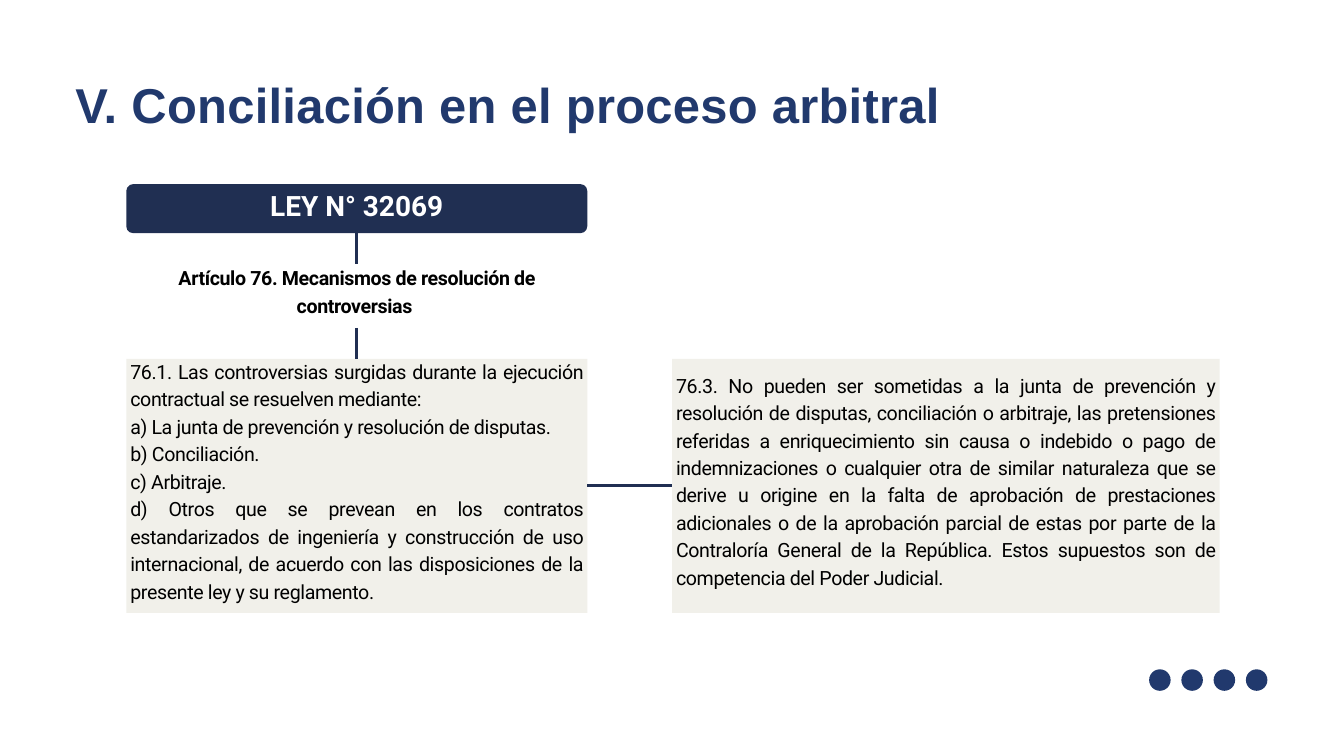
"""Build the slide on conciliation within arbitration proceedings."""
from dataclasses import dataclass

from lxml import etree
from pptx import Presentation
from pptx.dml.color import RGBColor
from pptx.enum.shapes import MSO_CONNECTOR, MSO_SHAPE
from pptx.enum.text import MSO_ANCHOR, MSO_AUTO_SIZE, PP_ALIGN
from pptx.oxml.ns import qn
from pptx.util import Inches, Pt

RECT, ROUNDED, OVAL = MSO_SHAPE.RECTANGLE, MSO_SHAPE.ROUNDED_RECTANGLE, MSO_SHAPE.OVAL
LEFT, CENTER, JUSTIFY = PP_ALIGN.LEFT, PP_ALIGN.CENTER, PP_ALIGN.JUSTIFY
TOP, MIDDLE = MSO_ANCHOR.TOP, MSO_ANCHOR.MIDDLE
STRAIGHT = MSO_CONNECTOR.STRAIGHT
NO_AUTOFIT = MSO_AUTO_SIZE.NONE
SIDE_TOP, SIDE_LEFT, SIDE_BOTTOM, SIDE_RIGHT = range(4)

COLORS = {
    "title": "21396D",
    "navy": "202F52",
    "panel": "F1F0EA",
    "white": "FFFFFF",
    "black": "000000",
}


@dataclass(frozen=True)
class TextStyle:
    """Format shared by all the paragraphs of a text."""

    size: float
    line: float
    color: str
    align: PP_ALIGN
    font: str = "Roboto"
    bold: bool = False
    tracking: float = 0


@dataclass(frozen=True)
class Box:
    """A filled box with its text, which sits above centre by half the lift."""

    left: float
    top: float
    width: float
    height: float
    fill: str
    lift: float
    style: TextStyle
    paragraphs: tuple[str, ...]
    shape: MSO_SHAPE = RECT


TITLE = TextStyle(52.4, 59.7, "title", LEFT, font="Arial", bold=True, tracking=0.3)
HEADING = TextStyle(30, 39, "white", CENTER, bold=True)
ARTICLE = TextStyle(21, 29.4, "black", CENTER, bold=True, tracking=-0.4)
BODY = TextStyle(21, 29.4, "black", JUSTIFY, tracking=-0.4)

BOXES = {
    "law": Box(1.88, 2.74, 6.86, 0.73, "navy", 0.13, HEADING, ("LEY N° 32069",), ROUNDED),
    "article": Box(1.88, 3.93, 6.86, 0.95, "white", 0.19, ARTICLE, (
        "Artículo 76. Mecanismos de resolución de controversias ",
    )),
    "mechanisms": Box(1.88, 5.34, 6.86, 3.78, "panel", 0.19, BODY, (
        "76.1. Las controversias surgidas durante la ejecución contractual se "
        "resuelven mediante:",
        "a) La junta de prevención y resolución de disputas.",
        "b) Conciliación.",
        "c) Arbitraje.",
        "d) Otros que se prevean en los contratos estandarizados de ingeniería y "
        "construcción de uso internacional, de acuerdo con las disposiciones de la "
        "presente ley y su reglamento.",
    )),
    "exclusions": Box(10, 5.34, 8.15, 3.78, "panel", 0.19, BODY, (
        "76.3. No pueden ser sometidas a la junta de prevención y resolución de "
        "disputas, conciliación o arbitraje, las pretensiones referidas a "
        "enriquecimiento sin causa o indebido o pago de indemnizaciones o cualquier "
        "otra de similar naturaleza que se derive u origine en la falta de aprobación "
        "de prestaciones adicionales o de la aprobación parcial de estas por parte de "
        "la Contraloría General de la República. Estos supuestos son de competencia "
        "del Poder Judicial.",
    )),
}

LINKS = (
    ("law", SIDE_BOTTOM, "article", SIDE_TOP),
    ("article", SIDE_BOTTOM, "mechanisms", SIDE_TOP),
    ("mechanisms", SIDE_RIGHT, "exclusions", SIDE_LEFT),
)

DOT_COUNT, DOT_LEFT, DOT_TOP, DOT_SIZE, DOT_PITCH = 4, 17.1, 9.96, 0.32, 0.48


def rgb(name: str) -> RGBColor:
    """Return a named colour."""
    return RGBColor.from_string(COLORS[name])


def write(tf, paragraphs: tuple[str, ...], style: TextStyle) -> None:
    """Fill a text frame with paragraphs in one style."""
    tf.word_wrap = True
    tf.auto_size = NO_AUTOFIT
    for i, text in enumerate(paragraphs):
        p = tf.add_paragraph() if i else tf.paragraphs[0]
        p.alignment = style.align
        p.line_spacing = Pt(style.line)
        p.space_before = p.space_after = Pt(0)
        p.font.name = style.font
        p.font.size = Pt(style.size)
        p.font.bold = style.bold
        p.font.color.rgb = rgb(style.color)
        r = p.add_run()
        r.text = text
        if style.tracking:
            r.font._element.set("spc", str(round(style.tracking * 100)))


def add_filled(s, kind: MSO_SHAPE, left: float, top: float, width: float,
               height: float, fill: str):
    """Add a plain filled shape without outline or shadow."""
    sp = s.shapes.add_shape(kind, Inches(left), Inches(top), Inches(width), Inches(height))
    sp.shadow.inherit = False
    sp.fill.solid()
    sp.fill.fore_color.rgb = rgb(fill)
    sp.line.fill.background()
    return sp


def add_box(s, box: Box):
    """Add a box and its text."""
    sp = add_filled(s, box.shape, box.left, box.top, box.width, box.height, box.fill)
    if box.shape == ROUNDED:
        sp.adjustments[0] = 0.14
    tf = sp.text_frame
    tf.vertical_anchor = MIDDLE
    tf.margin_left = tf.margin_right = Inches(0.06)
    tf.margin_top = 0
    tf.margin_bottom = Inches(box.lift)
    write(tf, box.paragraphs, box.style)
    return sp


def add_link(s, start, start_side: int, end, end_side: int) -> None:
    """Join the sides of two boxes with a straight line."""
    line = s.shapes.add_connector(STRAIGHT, 0, 0, 0, 0)
    line.begin_connect(start, start_side)
    line.end_connect(end, end_side)
    line.line.color.rgb = rgb("navy")
    line.line.width = Pt(3)
    etree.SubElement(line._element.spPr, qn("a:effectLst"))


def add_title(s, text: str) -> None:
    """Place and format the title placeholder."""
    sp = s.shapes.title
    sp.left, sp.top, sp.width, sp.height = map(Inches, (1.12, 1.16, 14.35, 0.84))
    tf = sp.text_frame
    tf.vertical_anchor = TOP
    tf.margin_left = tf.margin_top = tf.margin_right = tf.margin_bottom = 0
    write(tf, (text,), TITLE)


def main() -> None:
    """Build and save the presentation."""
    prs = Presentation()
    prs.slide_width, prs.slide_height = Inches(20), Inches(11.25)
    s = prs.slides.add_slide(prs.slide_layouts[5])
    add_title(s, "V. Conciliación en el proceso arbitral")
    for i in range(DOT_COUNT):
        add_filled(s, OVAL, DOT_LEFT + i * DOT_PITCH, DOT_TOP, DOT_SIZE, DOT_SIZE, "title")
    shapes = {name: add_box(s, box) for name, box in BOXES.items()}
    for start, start_side, end, end_side in LINKS:
        add_link(s, shapes[start], start_side, shapes[end], end_side)
    prs.save("out.pptx")


if __name__ == "__main__":
    main()
